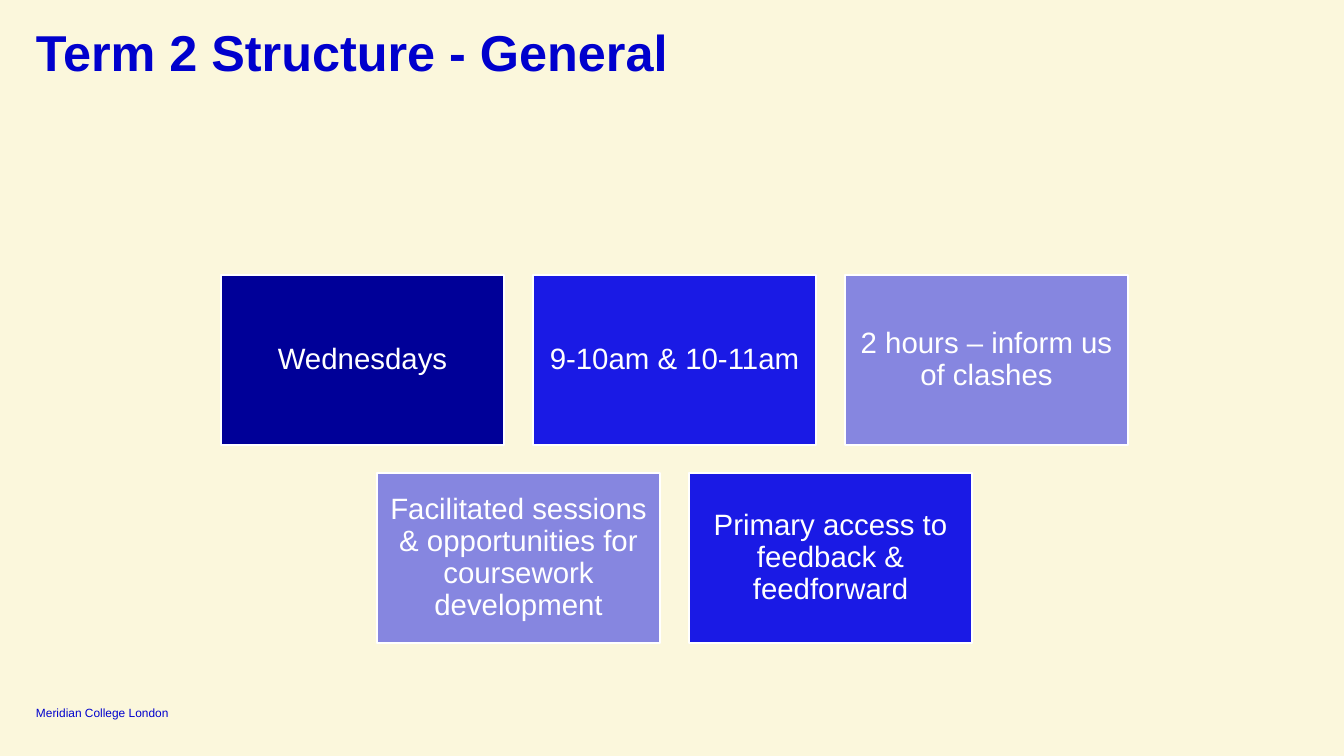
"""Build the Term 2 structure slide: a title, five centred cards and a footer."""
from pptx import Presentation
from pptx.dml.color import RGBColor
from pptx.enum.shapes import MSO_SHAPE
from pptx.enum.text import MSO_ANCHOR, MSO_AUTO_SIZE, PP_ALIGN
from pptx.util import Emu, Pt

RECT = MSO_SHAPE.RECTANGLE
TOP, MIDDLE, BOTTOM = MSO_ANCHOR.TOP, MSO_ANCHOR.MIDDLE, MSO_ANCHOR.BOTTOM
LEFT, CENTER = PP_ALIGN.LEFT, PP_ALIGN.CENTER
NO_FIT = MSO_AUTO_SIZE.NONE
FONT = "Arial"
COLORS = {
    "cream": "FBF7DC",
    "blue": "0000CD",
    "navy": "000098",
    "bright": "1A1AE5",
    "lilac": "8686E0",
    "white": "FFFFFF",
}
SLIDE_W, SLIDE_H = 1344, 756
CARD_W, CARD_H = 283, 170
PITCH_X, PITCH_Y = 312, 198
CARDS_TOP, CARDS_CENTER = 275, 674
ROWS = [
    [("Wednesdays", "navy"),
     ("9-10am & 10-11am", "bright"),
     ("2 hours – inform us of clashes", "lilac")],
    [("Facilitated sessions & opportunities for coursework development", "lilac"),
     ("Primary access to feedback & feedforward", "bright")],
]


def px(n):
    return Emu(round(n * 914400 / 100.8))


def set_text(sp, text, size, color, anchor, align, inset=0, bold=False, spacing=0.9):
    tf = sp.text_frame
    tf.word_wrap = True
    tf.auto_size = NO_FIT
    tf.vertical_anchor = anchor
    tf.margin_left = tf.margin_right = tf.margin_top = tf.margin_bottom = px(inset)
    p = tf.paragraphs[0]
    p.text = text
    p.alignment = align
    p.line_spacing = spacing
    p.font.name = FONT
    p.font.size = Pt(size)
    p.font.bold = bold
    p.font.color.rgb = RGBColor.from_string(COLORS[color])


prs = Presentation()
prs.slide_width, prs.slide_height = px(SLIDE_W), px(SLIDE_H)
s = prs.slides.add_slide(prs.slide_layouts[5])
s.background.fill.solid()
s.background.fill.fore_color.rgb = RGBColor.from_string(COLORS["cream"])

title = s.shapes.title
title.left, title.top, title.width, title.height = px(36), px(28), px(1272), px(41)
set_text(title, "Term 2 Structure - General", 36, "blue", TOP, LEFT, bold=True)

for row, cards in enumerate(ROWS):
    row_w = (len(cards) - 1) * PITCH_X + CARD_W
    left = CARDS_CENTER - row_w // 2
    for col, (text, color) in enumerate(cards):
        sp = s.shapes.add_shape(RECT, px(left + col * PITCH_X), px(CARDS_TOP + row * PITCH_Y),
                                px(CARD_W), px(CARD_H))
        sp.shadow.inherit = False
        sp.fill.solid()
        sp.fill.fore_color.rgb = RGBColor.from_string(COLORS[color])
        sp.line.color.rgb = RGBColor.from_string(COLORS["white"])
        sp.line.width = Pt(1)
        set_text(sp, text, 21, "white", MIDDLE, CENTER, inset=9)

footer = s.shapes.add_textbox(px(36), px(705), px(156), px(15))
set_text(footer, "Meridian College London", 8.5, "blue", BOTTOM, LEFT, spacing=1.0)

prs.save("out.pptx")
